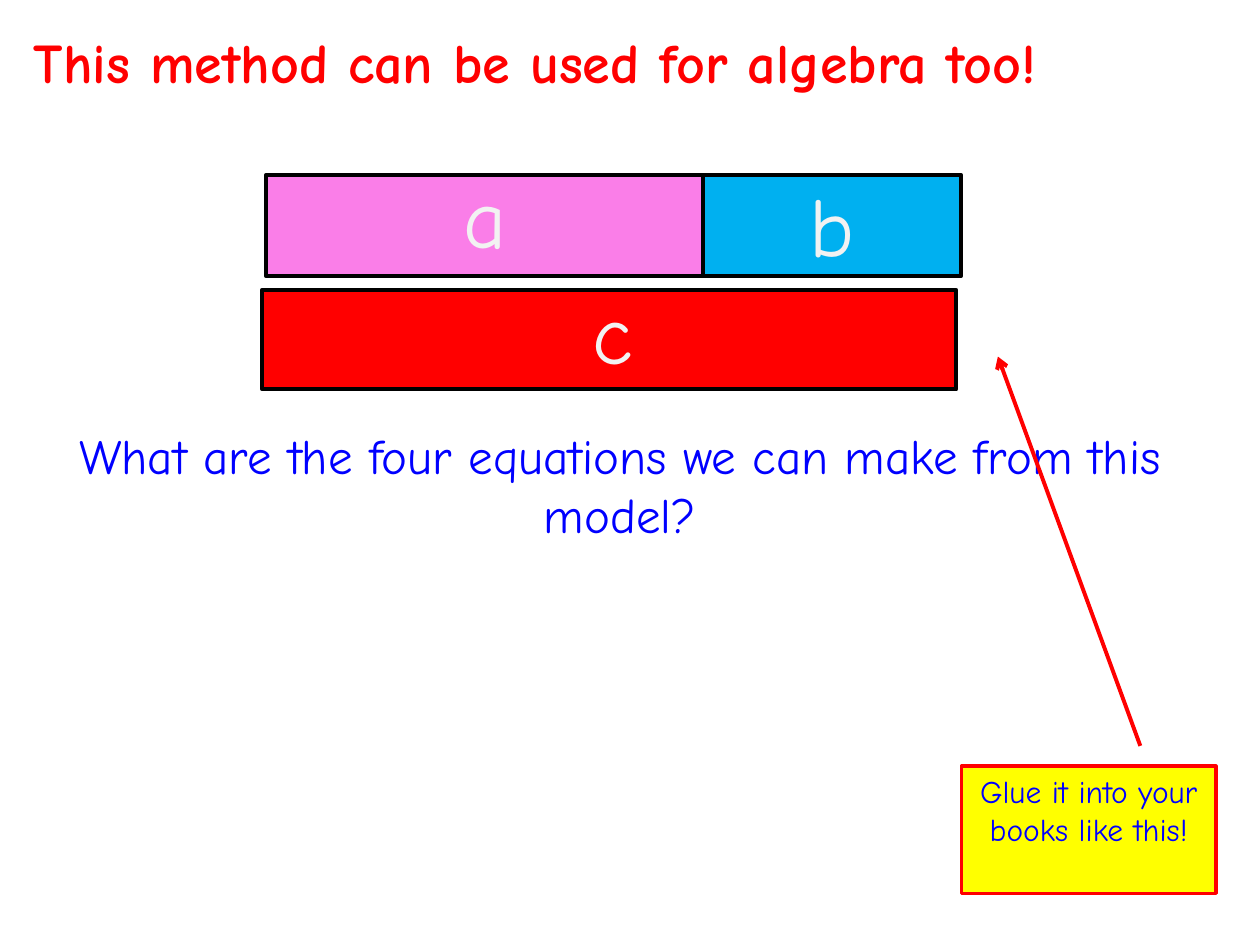
from dataclasses import dataclass

from lxml import etree
from pptx import Presentation
from pptx.dml.color import RGBColor
from pptx.enum.shapes import MSO_CONNECTOR, MSO_SHAPE
from pptx.enum.text import MSO_ANCHOR, PP_ALIGN as Align
from pptx.oxml.ns import qn
from pptx.util import Inches, Pt

FONT = "Comic Neue"
RED, BLUE, BLACK, PALE = "FF0000", "0000FF", "000000", "F2F2F2"


@dataclass
class Box:
    left: float
    top: float
    width: float
    height: float

    def emu(self) -> list:
        return [Inches(v) for v in (self.left, self.top, self.width, self.height)]


@dataclass
class Bar:
    box: Box
    fill: str


@dataclass
class Label:
    text: str
    box: Box
    size: int
    color: str
    align: Align = Align.CENTER
    bold: bool = False


def rgb(value: str) -> RGBColor:
    return RGBColor.from_string(value)


def write(tf, text: str, size: int, color: str, align: Align, bold: bool = False) -> None:
    tf.word_wrap = True
    tf.vertical_anchor = MSO_ANCHOR.TOP
    p = tf.paragraphs[0]
    p.alignment = align
    r = p.add_run()
    r.text = text
    formats = {"name": FONT, "size": Pt(size), "bold": bold}
    for name, value in formats.items():
        setattr(r.font, name, value)
    r.font.color.rgb = rgb(color)


def draw_rect(s, box: Box, fill: str, line: str, weight: float):
    sp = s.shapes.add_shape(MSO_SHAPE.RECTANGLE, *box.emu())
    sp.shadow.inherit = False
    sp.fill.solid()
    sp.fill.fore_color.rgb = rgb(fill)
    sp.line.color.rgb = rgb(line)
    sp.line.width = Pt(weight)
    return sp


def draw_label(s, label: Label) -> None:
    tf = s.shapes.add_textbox(*label.box.emu()).text_frame
    write(tf, label.text, label.size, label.color, label.align, label.bold)


def draw_arrow(s, start: tuple, end: tuple, color: str, weight: float) -> None:
    points = [Inches(v) for v in (*start, *end)]
    cxn = s.shapes.add_connector(MSO_CONNECTOR.STRAIGHT, *points)
    cxn.line.color.rgb = rgb(color)
    cxn.line.width = Pt(weight)
    etree.SubElement(cxn.line._get_or_add_ln(), qn("a:tailEnd"), type="arrow")
    etree.SubElement(cxn._element.spPr, qn("a:effectLst"))


BARS = [
    Bar(Box(2.11, 1.39, 5.51, 0.8), "FA7EE8"),
    Bar(Box(2.08, 2.3, 5.51, 0.79), RED),
    Bar(Box(5.58, 1.39, 2.05, 0.8), "00B0F0"),
]

LABELS = [
    Label("This method can be used for algebra too!", Box(0.17, 0.17, 9.83, 0.64),
          32, RED, Align.LEFT, True),
    Label("a", Box(3.58, 1.26, 1.17, 0.91), 48, PALE, Align.LEFT),
    Label("b", Box(6.02, 1.33, 1.17, 0.91), 48, PALE),
    Label("c", Box(4.28, 2.18, 1.17, 0.91), 48, PALE),
    Label("What are the four equations we can make from this model?",
          Box(0.42, 3.33, 9, 1.04), 28, BLUE),
]


def main() -> None:
    prs = Presentation()
    prs.slide_width, prs.slide_height = Inches(10), Inches(7.5)
    s = prs.slides.add_slide(prs.slide_layouts[6])

    # Bar model
    for bar in BARS:
        draw_rect(s, bar.box, bar.fill, BLACK, 2.25)

    # Title, bar letters and question
    for label in LABELS:
        draw_label(s, label)

    # Note with an arrow to the model
    note = draw_rect(s, Box(7.63, 6.08, 2.02, 1.01), "FFFF00", RED, 2)
    write(note.text_frame, "Glue it into your books like this!", 18, BLUE, Align.CENTER)
    draw_arrow(s, (9.05, 5.92), (7.92, 2.83), RED, 2.25)

    prs.save("out.pptx")


if __name__ == "__main__":
    main()
